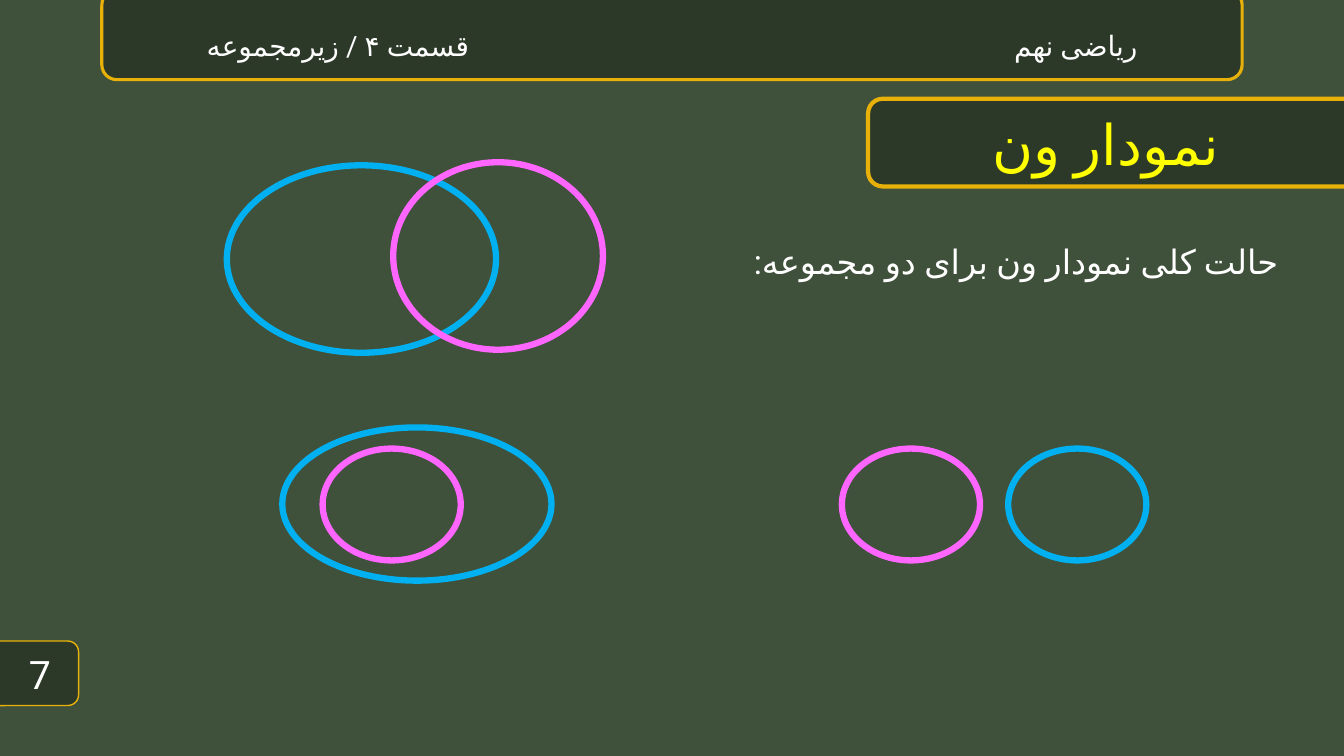
from lxml import etree
from pptx import Presentation
from pptx.dml.color import RGBColor
from pptx.enum import lang, shapes, text
from pptx.oxml import ns
from pptx.util import Inches, Pt

FONT = "Roboto"
COLORS = {
    "background": "40513B",
    "panel": "2C3929",
    "gold": "E7B10A",
    "white": "FFFFFF",
    "yellow": "FFFF00",
    "pink": "FF66FF",
    "blue": "00B0F0",
}
PANELS = [
    ((1.01, -0.1, 11.31, 0.89), 2.25),
    ((8.61, 0.98, 4.98, 0.87), 3),
    ((-0.15, 6.36, 0.93, 0.64), 1),
]
SMALL_CIRCLE = (1.37, 1.11)
VENN_DIAGRAMS = [
    [("pink", (8.35, 4.45, *SMALL_CIRCLE)), ("blue", (10, 4.45, *SMALL_CIRCLE))],
    [("blue", (2.8, 4.24, 2.67, 1.52)), ("pink", (3.2, 4.45, *SMALL_CIRCLE))],
    [("blue", (2.25, 1.64, 2.67, 1.86)), ("pink", (3.9, 1.61, 2.08, 1.86))],
]


def color(name):
    return RGBColor.from_string(COLORS[name])


def add_outlined(container, preset, box, line, width, fill=None):
    shape = container.add_shape(preset, *map(Inches, box))
    shape.shadow.inherit = False
    if fill:
        shape.fill.solid()
        shape.fill.fore_color.rgb = color(fill)
    else:
        shape.fill.background()
    shape.line.color.rgb = color(line)
    shape.line.width = Pt(width)


def add_venn(slide, sets):
    group = slide.shapes.add_group_shape()
    for line, box in sets:
        add_outlined(group.shapes, shapes.MSO_SHAPE.OVAL, box, line, 4.5)


def add_text(slide, content, box, size, ink="white", align=text.PP_ALIGN.CENTER,
             anchor=text.MSO_ANCHOR.MIDDLE, spacing=None):
    frame = slide.shapes.add_textbox(*map(Inches, box)).text_frame
    frame.word_wrap = True
    frame.vertical_anchor = anchor
    paragraph = frame.paragraphs[0]
    paragraph.alignment = align
    paragraph._p.get_or_add_pPr().set("rtl", "1")
    if spacing:
        paragraph.line_spacing = spacing
    run = paragraph.add_run()
    run.text = content
    run.font.size = Pt(size)
    run.font.name = FONT
    run.font.language_id = lang.MSO_LANGUAGE_ID.FARSI
    run.font.color.rgb = color(ink)
    etree.SubElement(run._r.get_or_add_rPr(), ns.qn("a:cs"), typeface=FONT)


def main():
    presentation = Presentation()
    presentation.slide_width = Inches(13.33)
    presentation.slide_height = Inches(7.5)
    slide = presentation.slides.add_slide(presentation.slide_layouts[6])
    slide.background.fill.solid()
    slide.background.fill.fore_color.rgb = color("background")

    for box, width in PANELS:
        add_outlined(slide.shapes, shapes.MSO_SHAPE.ROUNDED_RECTANGLE, box,
                     "gold", width, fill="panel")

    add_text(slide, "ریاضی نهم", (9.17, 0.2, 3, 0.49), 20)
    add_text(slide, "قسمت ۴ / زیرمجموعه", (1.35, 0.2, 4, 0.49), 20)
    add_text(slide, "7", (0.01, 6.29, 0.77, 0.79), 28)
    add_text(slide, "نمودار ون", (8.61, 0.98, 4.72, 0.87), 40, ink="yellow")
    add_text(slide, "حالت کلی نمودار ون برای دو مجموعه:", (1.47, 2.14, 11.31, 0.66), 24,
             align=text.PP_ALIGN.JUSTIFY, anchor=text.MSO_ANCHOR.TOP, spacing=1.5)

    for sets in VENN_DIAGRAMS:
        add_venn(slide, sets)

    presentation.save("out.pptx")


if __name__ == "__main__":
    main()
